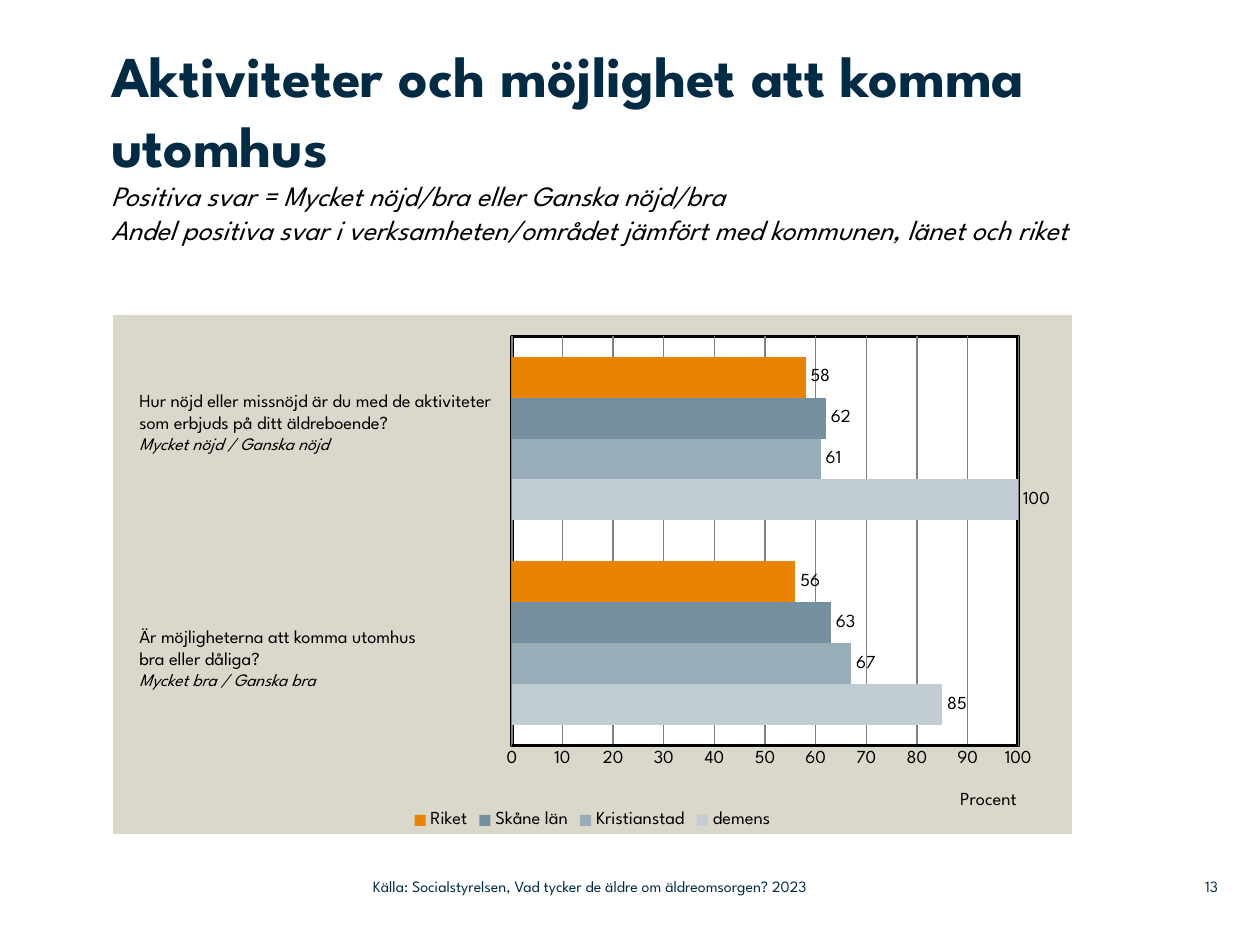
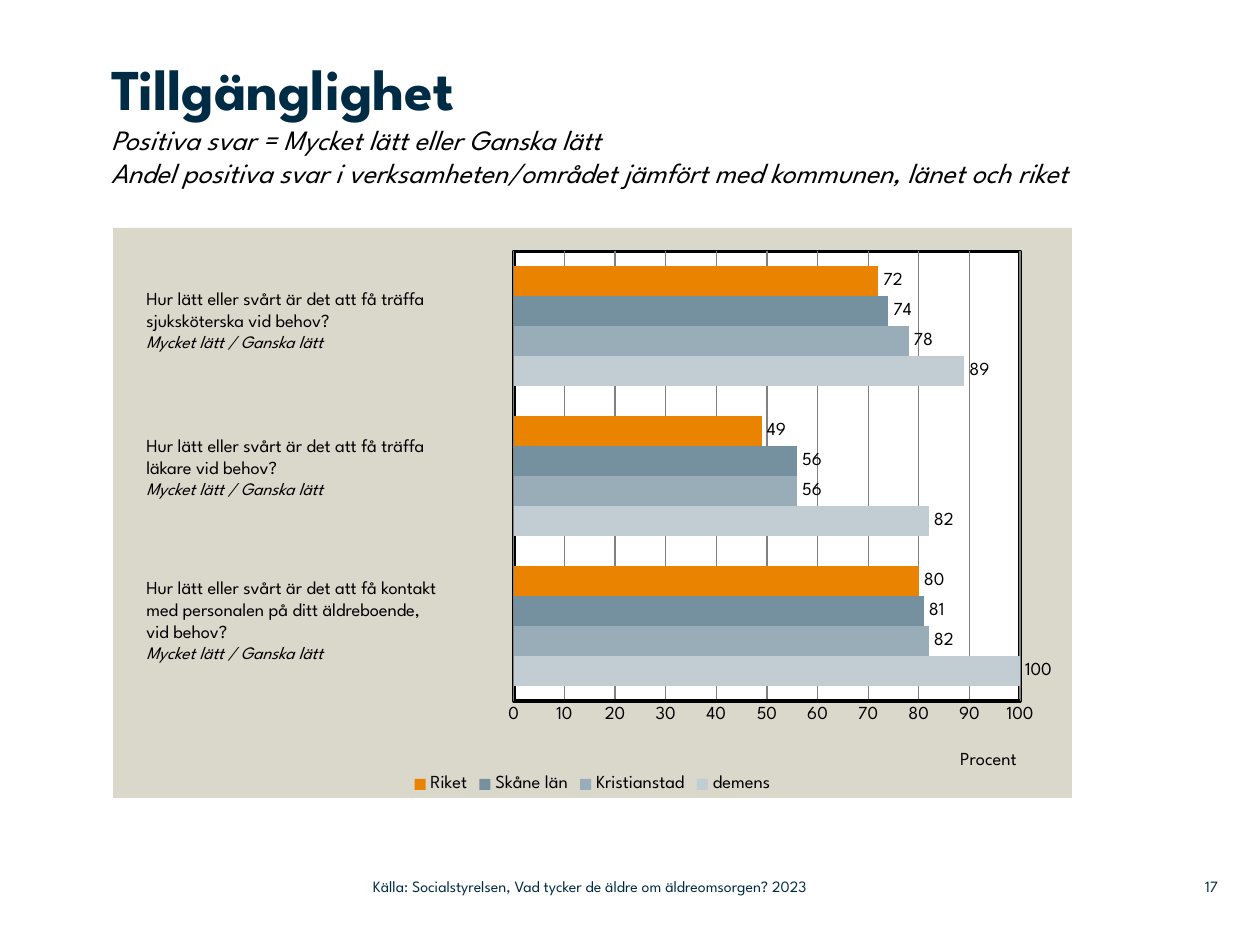
"""Builds two survey result slides with bar charts comparing care home, municipality, county and country."""
from lxml import etree
from pptx import Presentation, util as u
from pptx.chart.data import CategoryChartData
from pptx.dml.color import RGBColor
from pptx.enum import chart as ch, text
from pptx.oxml.ns import qn

FONT = "League Spartan"
NAVY, BLACK, WHITE, BEIGE, GRID = "002B45", "000000", "FFFFFF", "DAD7CB", "808080"
SERIES_COLORS = {"demens": "C2CDD3", "Kristianstad": "99ADB9", "Skåne län": "75909F", "Riket": "E98300"}
SOURCE = "Källa: Socialstyrelsen, Vad tycker de äldre om äldreomsorgen? 2023"
COMPARISON = "Andel positiva svar i verksamheten/området jämfört med kommunen, länet och riket"
LABEL_WIDTH, LABEL_HEIGHT = 380, 102
FOOTER_TOP, FOOTER_HEIGHT = 868, 37

SLIDES = [
    {
        "number": "13",
        "title": "Aktiviteter och möjlighet att komma utomhus",
        "scale": "Positiva svar = Mycket nöjd/bra eller Ganska nöjd/bra",
        "title_area": (111, 40, 983, 238),
        "chart_area": (113, 315, 959, 519),
        "plot_left": 0.416,
        "values": {"demens": (85, 100), "Kristianstad": (67, 61), "Skåne län": (63, 62), "Riket": (56, 58)},
        "label_left": 127,
        "questions": [
            (383, ["Hur nöjd eller missnöjd är du med de aktiviteter som erbjuds på ditt äldreboende?"],
             "Mycket nöjd / Ganska nöjd"),
            (619, ["Är möjligheterna att komma utomhus", "bra eller dåliga?"],
             "Mycket bra / Ganska bra"),
        ],
    },
    {
        "number": "17",
        "title": "Tillgänglighet",
        "scale": "Positiva svar = Mycket lätt eller Ganska lätt",
        "title_area": (111, 53, 979, 175),
        "chart_area": (113, 228, 959, 570),
        "plot_left": 0.418,
        "values": {"demens": (100, 82, 89), "Kristianstad": (82, 56, 78),
                   "Skåne län": (81, 56, 74), "Riket": (80, 49, 72)},
        "label_left": 134,
        "questions": [
            (281, ["Hur lätt eller svårt är det att få träffa sjuksköterska vid behov?"],
             "Mycket lätt / Ganska lätt"),
            (428, ["Hur lätt eller svårt är det att få träffa", "läkare vid behov?"],
             "Mycket lätt / Ganska lätt"),
            (570, ["Hur lätt eller svårt är det att få kontakt", "med personalen på ditt äldreboende,",
                   "vid behov?"], "Mycket lätt / Ganska lätt"),
        ],
    },
]


def px(length):
    return u.Emu(round(length * 914400 / 126))


def rgb(color):
    return RGBColor.from_string(color)


def style(font, size, color=BLACK, bold=False, italic=False):
    font.name, font.size, font.bold, font.italic = FONT, u.Pt(size), bold, italic
    font.color.rgb = rgb(color)


def write(frame, lines, align=text.PP_ALIGN.LEFT):
    for index, (words, looks) in enumerate(lines):
        para = frame.paragraphs[0] if index == 0 else frame.add_paragraph()
        para.alignment = align
        span = para.add_run()
        span.text = words
        style(span.font, **looks)


def remove_insets(frame):
    frame.margin_left = frame.margin_top = frame.margin_right = frame.margin_bottom = 0


def add_title(page, content):
    box = page.shapes.title
    box.left, box.top, box.width, box.height = map(px, content["title_area"])
    frame = box.text_frame
    frame.word_wrap, frame.auto_size = True, text.MSO_AUTO_SIZE.NONE
    frame.vertical_anchor = text.MSO_ANCHOR.TOP
    remove_insets(frame)
    subtitle = dict(size=16, italic=True)
    write(frame, [(content["title"], dict(size=33, color=NAVY, bold=True)),
                  (content["scale"], subtitle), (COMPARISON, subtitle)])


def add_text(page, area, lines, align=text.PP_ALIGN.LEFT):
    frame = page.shapes.add_textbox(*map(px, area)).text_frame
    frame.word_wrap = True
    write(frame, lines, align)
    return frame


def add_footer(page, number):
    for left, width, words, align in [(373, 558, SOURCE, text.PP_ALIGN.LEFT),
                                      (1159, 59, number, text.PP_ALIGN.RIGHT)]:
        frame = add_text(page, (left, FOOTER_TOP, width, FOOTER_HEIGHT),
                         [(words, dict(size=9, color=NAVY))], align)
        frame.vertical_anchor = text.MSO_ANCHOR.MIDDLE
        remove_insets(frame)


def set_layout(parent, **settings):
    layout = parent.find(qn("c:layout"))
    if layout is None:
        layout = etree.Element(qn("c:layout"))
        parent.insert(0, layout)
    manual = etree.SubElement(layout, qn("c:manualLayout"))
    for name, value in settings.items():
        etree.SubElement(manual, qn(f"c:{name}"), val=str(value))


def area_format(fill, line=None):
    properties = etree.Element(qn("c:spPr"))
    solid = etree.SubElement(properties, qn("a:solidFill"))
    etree.SubElement(solid, qn("a:srgbClr"), val=fill)
    border = etree.SubElement(properties, qn("a:ln"), w=str(u.Pt(2)))
    if line:
        solid = etree.SubElement(border, qn("a:solidFill"))
        etree.SubElement(solid, qn("a:srgbClr"), val=line)
    else:
        etree.SubElement(border, qn("a:noFill"))
    return properties


def add_value_axis(axis):
    axis.minimum_scale, axis.maximum_scale, axis.major_unit = 0, 100, 10
    axis.major_tick_mark = axis.minor_tick_mark = ch.XL_TICK_MARK.NONE
    axis.format.line.color.rgb = rgb(BLACK)
    axis.format.line.width = u.Pt(2)
    axis.has_major_gridlines = True
    axis.major_gridlines.format.line.color.rgb = rgb(GRID)
    axis.major_gridlines.format.line.width = u.Pt(0.75)
    style(axis.tick_labels.font, 10.5)
    write(axis.axis_title.text_frame, [("Procent", dict(size=10.5))])
    set_layout(axis.axis_title._element, xMode="edge", yMode="edge", x=0.88, y=0.91)


def add_bar_chart(page, content):
    data = CategoryChartData()
    data.categories = [str(index + 1) for index in range(len(content["questions"]))]
    for name, values in content["values"].items():
        data.add_series(name, values)
    chart = page.shapes.add_chart(ch.XL_CHART_TYPE.BAR_CLUSTERED,
                                  *map(px, content["chart_area"]), data).chart
    style(chart.font, 10.5)
    chart.has_title = False
    chart.has_legend = True
    chart.legend.position = ch.XL_LEGEND_POSITION.BOTTOM
    chart.legend.include_in_layout = False
    style(chart.legend.font, 10.5)
    chart.category_axis.visible = False
    add_value_axis(chart.value_axis)

    plot = chart.plots[0]
    plot.gap_width, plot.overlap, plot.vary_by_categories = 100, 0, False
    plot.has_data_labels = True
    plot.data_labels.show_value = True
    plot.data_labels.position = ch.XL_LABEL_POSITION.OUTSIDE_END
    style(plot.data_labels.font, 10.5)
    for series in plot.series:
        series.format.fill.solid()
        series.format.fill.fore_color.rgb = rgb(SERIES_COLORS[series.name])

    space = chart._chartSpace
    space.find(qn("c:chart")).addnext(area_format(BEIGE))
    plot_area = space.find(".//" + qn("c:plotArea"))
    plot_area.append(area_format(WHITE, BLACK))
    set_layout(plot_area, layoutTarget="inner", xMode="edge", yMode="edge",
               x=content["plot_left"], y=0.041, w=0.528, h=0.789)


def add_questions(page, content):
    for top, question, answers in content["questions"]:
        lines = [(words, dict(size=10.5)) for words in question]
        lines.append((answers, dict(size=10, italic=True)))
        frame = add_text(page, (content["label_left"], top, LABEL_WIDTH, LABEL_HEIGHT), lines)
        frame.auto_size = text.MSO_AUTO_SIZE.SHAPE_TO_FIT_TEXT


def main():
    deck = Presentation()
    deck.slide_width, deck.slide_height = px(1260), px(945)
    for content in SLIDES:
        page = deck.slides.add_slide(deck.slide_layouts[5])
        add_bar_chart(page, content)
        add_title(page, content)
        add_questions(page, content)
        add_footer(page, content["number"])
    deck.save("out.pptx")


if __name__ == "__main__":
    main()
